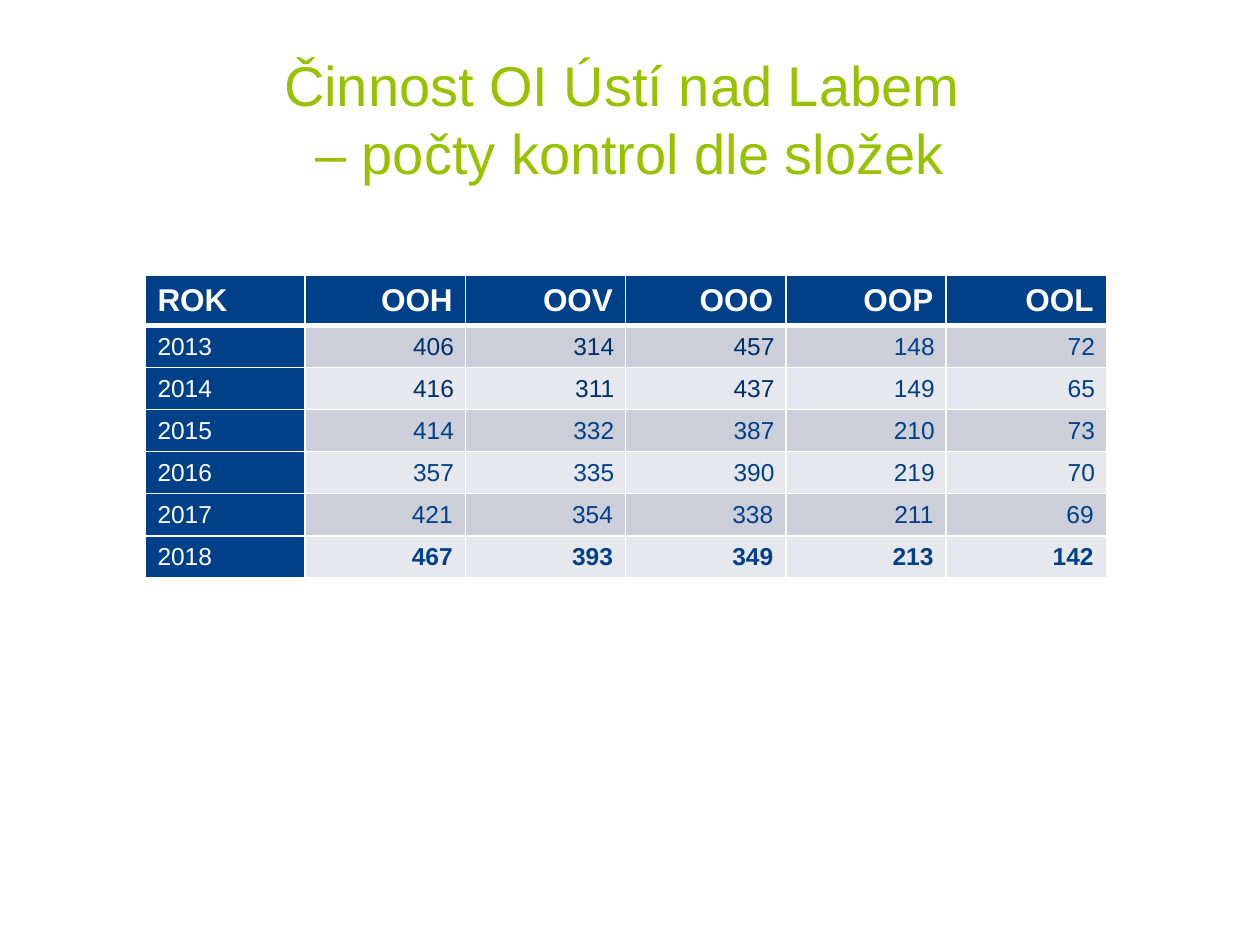
from lxml.etree import SubElement
from pptx import Presentation
from pptx.dml.color import RGBColor as Rgb
from pptx.enum.text import MSO_ANCHOR as Anchor, PP_ALIGN as Align
from pptx.oxml.ns import qn
from pptx.util import Inches, Pt

COLORS = {
    "title": "99C100",
    "blue": "004089",
    "navy": "003067",
    "white": "FFFFFF",
    "band_dark": "CCCFDA",
    "band_light": "E7E8ED",
}
TITLE = "Činnost OI Ústí nad Labem \v– počty kontrol dle složek"
HEADINGS = ["ROK", "OOH", "OOV", "OOO", "OOP", "OOL"]
INSPECTIONS = {
    2013: [406, 314, 457, 148, 72],
    2014: [416, 311, 437, 149, 65],
    2015: [414, 332, 387, 210, 73],
    2016: [357, 335, 390, 219, 70],
    2017: [421, 354, 338, 211, 69],
    2018: [467, 393, 349, 213, 142],
}


class Slide:
    """Holds the style and the current page; lengths are shares of the page."""

    font = "Arial"

    def __init__(self, deck):
        self.width, self.height = deck.slide_width, deck.slide_height
        self.page = deck.slides.add_slide(deck.slide_layouts[6])

    def place(self, left, top, width, height):
        return (int(left * self.width), int(top * self.height),
                int(width * self.width), int(height * self.height))

    def set_text(self, frame, text, size, color, align, bold=False):
        frame.text = text
        para = frame.paragraphs[0]
        para.alignment = align
        for span in para.runs:
            span.font.name, span.font.size = self.font, Pt(size)
            span.font.bold = bold
            span.font.color.rgb = Rgb.from_string(COLORS[color])

    def title(self, text, area):
        box = self.page.shapes.add_textbox(*self.place(*area))
        box.text_frame.word_wrap = True
        box.text_frame.vertical_anchor = Anchor.MIDDLE
        self.set_text(box.text_frame, text, 32, "title", Align.CENTER)

    def table(self, rows, columns, area, header_share):
        left, top, width, height = self.place(*area)
        frame = self.page.shapes.add_table(rows, columns, left, top, width, height)
        grid = frame.table
        header = int(height * header_share)
        for column in grid.columns:
            column.width = width // columns
        for index, row in enumerate(grid.rows):
            row.height = (height - header) // (rows - 1) if index else header
        return grid

    def cell(self, cell, text, fill, size, color, align, bold=False,
             top_line=1, bottom_line=1, tight=False):
        self.set_text(cell.text_frame, text, size, color, align, bold)
        cell.vertical_anchor = Anchor.MIDDLE
        if tight:
            cell.margin_left = cell.margin_top = Inches(0.01)
            cell.margin_right, cell.margin_bottom = Inches(0.09), 0
        # Borders come before the fill in the cell properties
        props = cell._tc.get_or_add_tcPr()
        lines = {"lnL": 1, "lnR": 1, "lnT": top_line, "lnB": bottom_line}
        for tag, weight in lines.items():
            line = SubElement(props, qn(f"a:{tag}"), w=str(int(Pt(weight))))
            paint = SubElement(line, qn("a:solidFill"))
            SubElement(paint, qn("a:srgbClr"), val=COLORS["white"])
        cell.fill.solid()
        cell.fill.fore_color.rgb = Rgb.from_string(COLORS[fill])


def main():
    deck = Presentation()
    deck.slide_width, deck.slide_height = Inches(10), Inches(7.5)
    slide = Slide(deck)

    # Title
    slide.title(TITLE, (0.05, 0.04, 0.9, 0.17))

    # Table with one row per year
    grid = slide.table(len(INSPECTIONS) + 1, len(HEADINGS),
                       (0.115, 0.291, 0.763, 0.314), 0.164)

    # Header row
    for column, heading in enumerate(HEADINGS):
        align = Align.RIGHT if column else Align.LEFT
        slide.cell(grid.cell(0, column), heading, "blue", 18, "white", align,
                   bold=True, bottom_line=3)

    # Year column and counts
    for row, (year, counts) in enumerate(INSPECTIONS.items(), 1):
        top_line = 3 if row == 1 else 1
        band = "band_dark" if row % 2 else "band_light"
        slide.cell(grid.cell(row, 0), str(year), "blue", 14, "white",
                   Align.LEFT, top_line=top_line)
        for column, count in enumerate(counts, 1):
            color = "navy" if year <= 2014 and column <= 3 else "blue"
            slide.cell(grid.cell(row, column), str(count), band, 14, color,
                       Align.RIGHT, bold=year == 2018, top_line=top_line,
                       tight=year <= 2016)

    deck.save("out.pptx")


if __name__ == "__main__":
    main()
